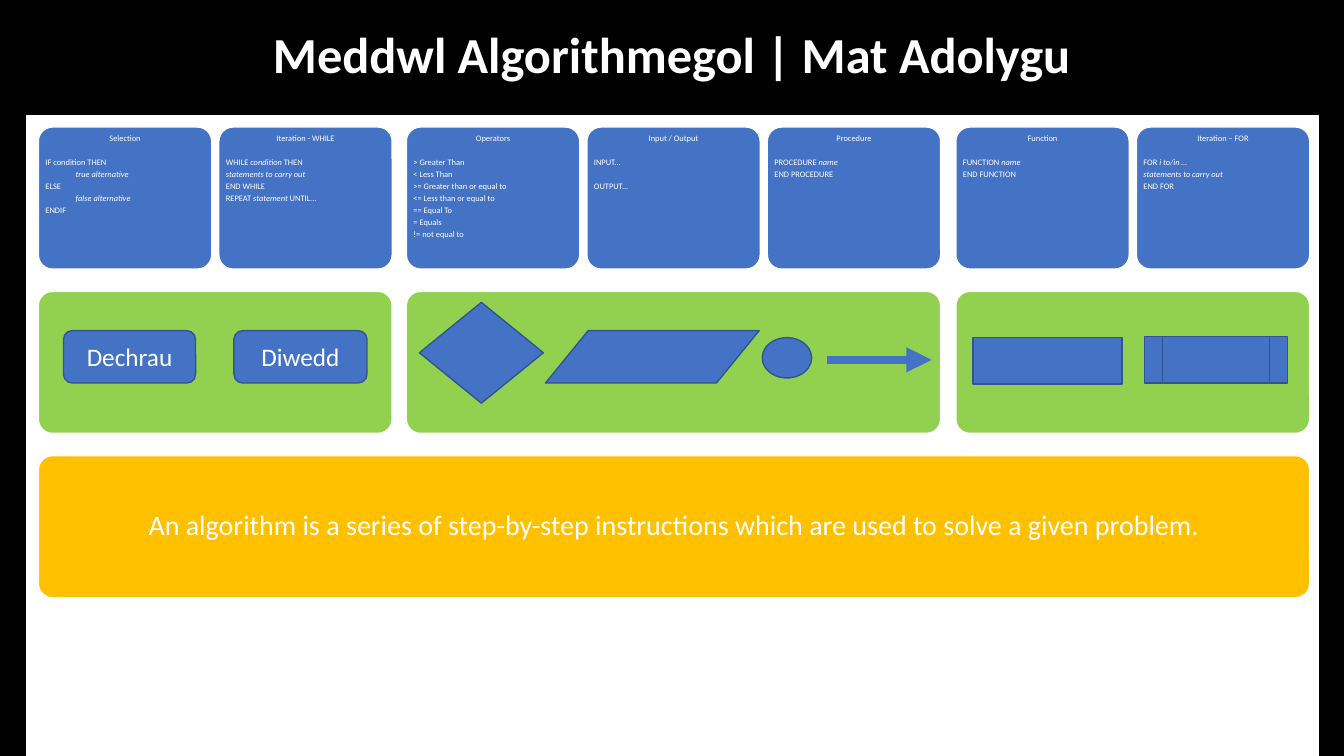
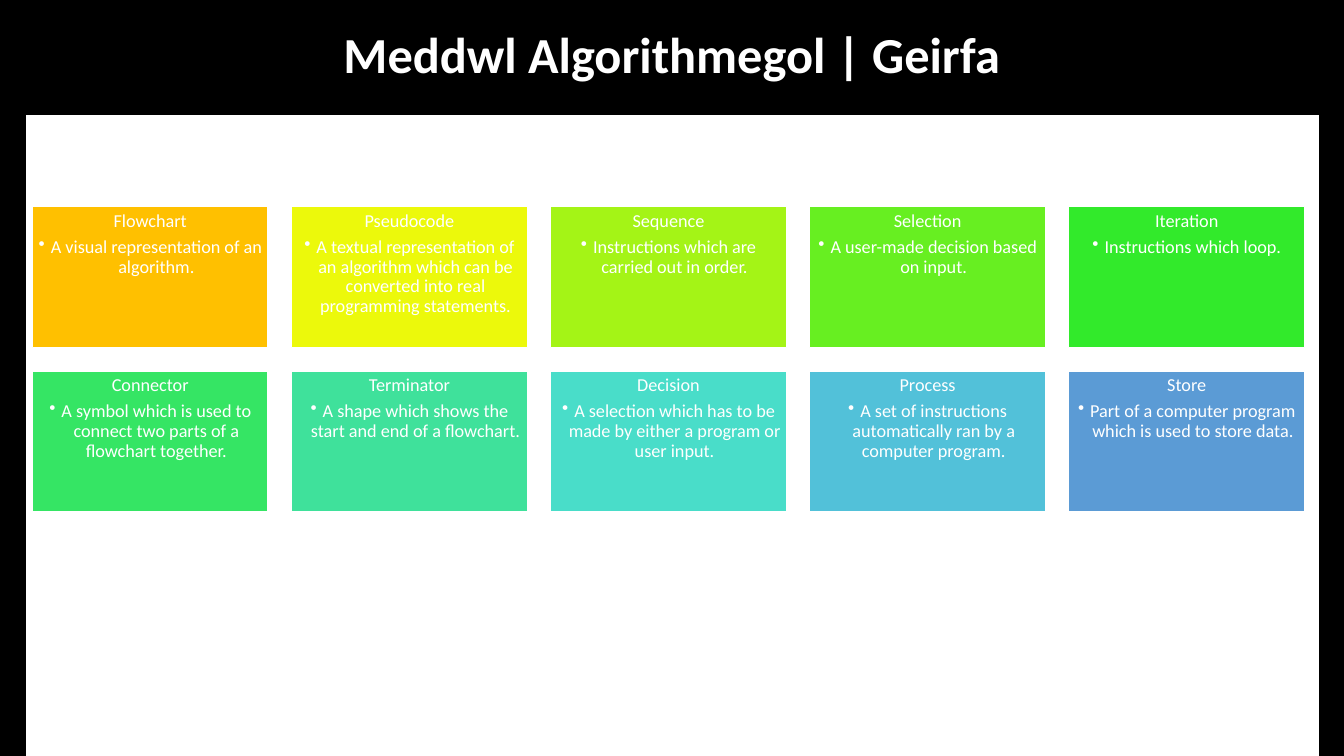
from lxml.etree import SubElement
from pptx import Presentation
from pptx.dml.color import RGBColor
from pptx.enum.shapes import MSO_CONNECTOR, MSO_SHAPE
from pptx.enum.text import MSO_ANCHOR, PP_ALIGN
from pptx.oxml.ns import qn
from pptx.util import Inches, Pt

# Shared look
WIDE, HIGH = 13.33, 7.5
HEAD, SIDE = 1.14, 0.25
FONT = "Calibri"
HUES = {
    "frame": "000000", "white": "FFFFFF", "blue": "4472C4", "edge": "325491",
    "green": "92D050", "gold": "FFC000",
}
TERM_HUES = {
    "Flowchart": "FFC000", "Pseudocode": "ECF90B", "Sequence": "A4F416",
    "Selection": "67EF21", "Iteration": "32EA2B", "Connector": "35E564",
    "Terminator": "3FE19B", "Decision": "49DDC9", "Process": "52C1D9",
    "Store": "5B9BD5",
}

# Revision mat: card groups as (left, [(heading, lines)]).
# Asterisks switch italics, a tab indents, an empty string leaves a gap.
GROUPS = [
    (0.38, [
        ("Selection", ["IF condition THEN", "\t*true alternative*", "ELSE",
                       "\t*false alternative*", "ENDIF"]),
        ("Iteration - WHILE", ["WHILE *condition* THEN",
                               "*statements to carry out*", "END WHILE",
                               "REPEAT *statement* UNTIL…"]),
    ]),
    (4.03, [
        ("Operators", ["> Greater Than", "< Less Than",
                       ">= Greater than or equal to",
                       "<= Less than or equal to", "== Equal To",
                       "= Equals", "!= not equal to"]),
        ("Input / Output", ["INPUT...", "", "OUTPUT..."]),
        ("Procedure", ["PROCEDURE *name*", "END PROCEDURE"]),
    ]),
    (9.48, [
        ("Function", ["FUNCTION *name*", "END FUNCTION"]),
        ("Iteration – FOR", ["FOR *i to/in …*", "*statements to carry out*",
                             "END FOR"]),
    ]),
]
SYMBOLS = [
    (MSO_SHAPE.FLOWCHART_ALTERNATE_PROCESS, (0.63, 3.28, 1.31, 0.52), "Dechrau"),
    (MSO_SHAPE.FLOWCHART_ALTERNATE_PROCESS, (2.32, 3.28, 1.32, 0.52), "Diwedd"),
    (MSO_SHAPE.OVAL, (7.56, 3.35, 0.49, 0.4), ""),
    (MSO_SHAPE.FLOWCHART_DECISION, (4.16, 3, 1.23, 1), ""),
    (MSO_SHAPE.FLOWCHART_PROCESS, (9.65, 3.35, 1.48, 0.46), ""),
    (MSO_SHAPE.FLOWCHART_DATA, (5.41, 3.28, 2.12, 0.52), ""),
    (MSO_SHAPE.FLOWCHART_PREDEFINED_PROCESS, (11.35, 3.34, 1.42, 0.46), ""),
]
MOTTO = ("An algorithm is a series of step-by-step instructions "
         "which are used to solve a given problem.")

# Vocabulary
TERMS = [
    ("Flowchart", "A visual representation of an algorithm."),
    ("Pseudocode", "A textual representation of an algorithm which can be "
                   "converted into real programming statements."),
    ("Sequence", "Instructions which are carried out in order."),
    ("Selection", "A user-made decision based on input."),
    ("Iteration", "Instructions which loop."),
    ("Connector", "A symbol which is used to connect two parts of a "
                  "flowchart together."),
    ("Terminator", "A shape which shows the start and end of a flowchart."),
    ("Decision", "A selection which has to be made by either a program or "
                 "user input."),
    ("Process", "A set of instructions automatically ran by a computer "
                "program."),
    ("Store", "Part of a computer program which is used to store data."),
]


def rgb(code):
    return RGBColor.from_string(code)


def put(target, values):
    for name, value in values.items():
        setattr(target, name, value)


def box(slide, kind, area, fill, edge=None, inset=None, top=False):
    """Add a filled shape, with an outline if an edge colour is given."""
    shape = slide.shapes.add_shape(kind, *map(Inches, area))
    shape.shadow.inherit = False
    shape.fill.solid()
    shape.fill.fore_color.rgb = rgb(fill)
    if edge:
        shape.line.color.rgb = rgb(edge)
        shape.line.width = Pt(1)
    else:
        shape.line.fill.background()
    if kind == MSO_SHAPE.ROUNDED_RECTANGLE:
        shape.adjustments[0] = 0.1
    frame = shape.text_frame
    put(frame, {"word_wrap": True,
                "vertical_anchor": MSO_ANCHOR.TOP if top else MSO_ANCHOR.MIDDLE})
    if inset is not None:
        put(frame, {"margin_" + side: Inches(inset)
                    for side in ("left", "right", "top", "bottom")})
    return shape


def write(shape, text, size, bold=False, align=PP_ALIGN.CENTER, space=0.9,
          after=0, before=0, left=0, bullet=False):
    """Add one paragraph, filling the first one while it is empty."""
    frame = shape.text_frame
    para = frame.paragraphs[0]
    if para.runs:
        para = frame.add_paragraph()
    put(para, {"alignment": align, "line_spacing": space,
               "space_after": Pt(after), "space_before": Pt(before)})
    props = para._p.get_or_add_pPr()
    props.set("marL", str(Inches(left)))
    if bullet:
        props.set("indent", str(-Inches(left)))
        SubElement(props, qn("a:buChar")).set("char", "•")
    for turn, part in enumerate(text.split("*")):
        if part:
            run = para.add_run()
            run.text = part
            put(run.font, {"name": FONT, "size": Pt(size), "bold": bold,
                           "italic": turn % 2 == 1})
            run.font.color.rgb = rgb(HUES["white"])


def panel(slide, area, fill, **opts):
    return box(slide, MSO_SHAPE.ROUNDED_RECTANGLE, area, HUES[fill],
               HUES["white"], **opts)


def card(slide, area, head, lines):
    """Add a code card: centred heading, then left-aligned lines."""
    shape = panel(slide, area, "blue", inset=0.03, top=True)
    write(shape, head, 6, after=2.1)
    gap = 8.6
    for line in lines:
        if line:
            write(shape, line.lstrip("\t"), 6, align=PP_ALIGN.LEFT, after=2.1,
                  before=gap, left=0.3 if line.startswith("\t") else 0)
        gap = 0 if line else 8.6


def arrow(slide, start, end):
    line = slide.shapes.add_connector(MSO_CONNECTOR.STRAIGHT,
                                      *map(Inches, start + end))
    line.line.color.rgb = rgb(HUES["blue"])
    line.line.width = Pt(6)
    SubElement(line.line._get_or_add_ln(), qn("a:tailEnd")).set("type", "triangle")
    SubElement(line._element.spPr, qn("a:effectLst"))


def page(deck, title):
    """Add a slide with the title band and side bands."""
    slide = deck.slides.add_slide(deck.slide_layouts[6])
    band = box(slide, MSO_SHAPE.RECTANGLE, (0, 0, WIDE, HEAD), HUES["frame"])
    write(band, title, 36, bold=True)
    for left in (0, 13.09):
        box(slide, MSO_SHAPE.RECTANGLE, (left, HEAD, SIDE, HIGH - HEAD),
            HUES["frame"], HUES["frame"])
    return slide


def mat(deck):
    slide = page(deck, "Meddwl Algorithmegol | Mat Adolygu")
    wide, high, gap = 1.72, 1.41, 0.07
    code, signs, base = (1.26 + 1.63 * row for row in range(3))
    # Code cards above one green panel per group
    for left, cards in GROUPS:
        span = len(cards) * (wide + gap) - gap
        panel(slide, (left, signs, span, high), "green")
        for col, (head, lines) in enumerate(cards):
            card(slide, (left + col * (wide + gap), code, wide, high),
                 head, lines)
    # Definition
    motto = panel(slide, (0.38, base, 12.61, high), "gold", inset=0.08)
    write(motto, MOTTO, 20)
    # Flowchart symbols
    for kind, area, label in SYMBOLS:
        sign = box(slide, kind, area, HUES["blue"], HUES["edge"])
        if label:
            write(sign, label, 18, space=1)
    arrow(slide, (8.2, 3.57), (9.24, 3.57))


def vocab(deck):
    slide = page(deck, "Meddwl Algorithmegol | Geirfa")
    wide, high, gap = 2.34, 1.4, 0.23
    for spot, (term, text) in enumerate(TERMS):
        row, col = divmod(spot, 5)
        area = (0.32 + col * (wide + gap), 2.05 + row * (high + gap), wide, high)
        tile = box(slide, MSO_SHAPE.RECTANGLE, area, TERM_HUES[term],
                   HUES["white"], inset=0.05, top=True)
        write(tile, term, 13, after=4.55)
        write(tile, text, 13, left=0.12, bullet=True)


def main():
    deck = Presentation()
    put(deck, {"slide_width": Inches(WIDE), "slide_height": Inches(HIGH)})
    mat(deck)
    vocab(deck)
    deck.save("out.pptx")


if __name__ == "__main__":
    main()
